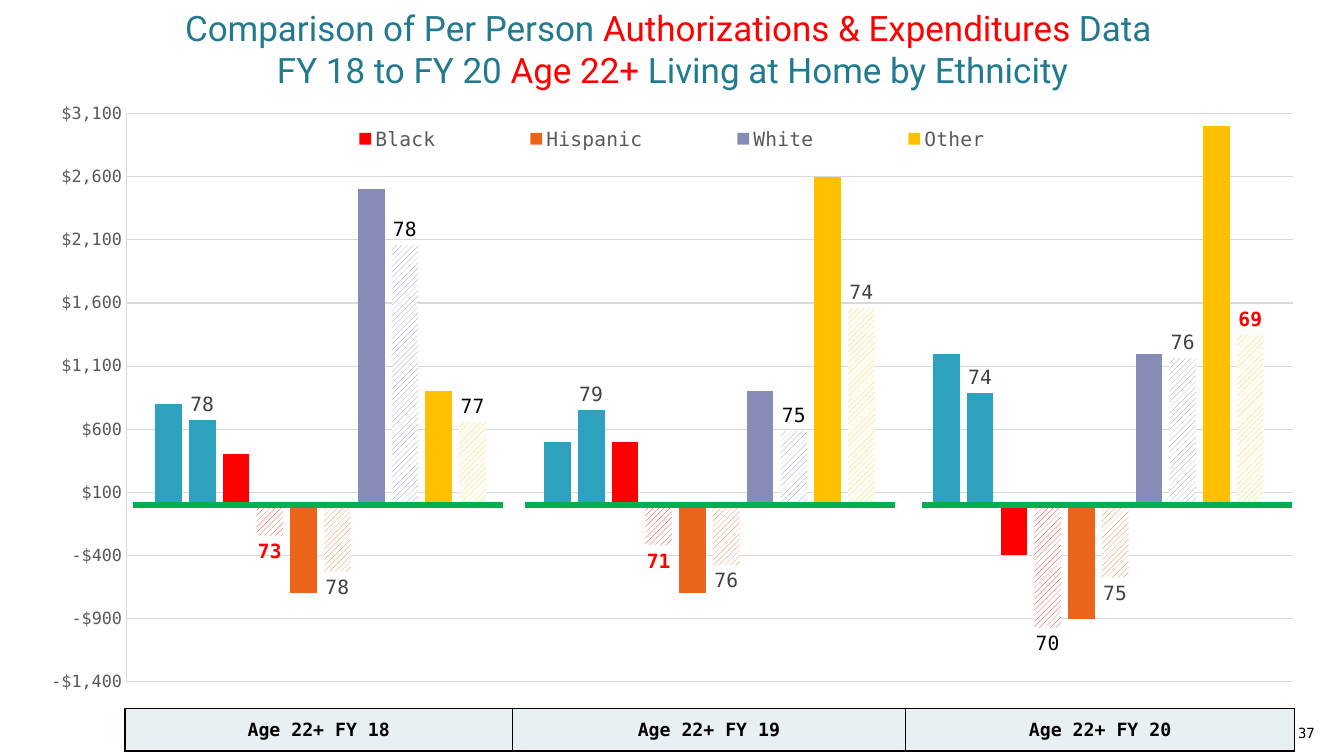
"""Build the slide comparing per person authorizations and expenditures by ethnicity."""
from lxml import etree
from pptx import Presentation
from pptx import util as u
from pptx.chart.data import CategoryChartData
from pptx.dml.color import RGBColor
from pptx.enum import chart as ch, dml, shapes, text
from pptx.oxml.ns import qn

WIDTH, HEIGHT = 13.33, 7.5
MONO, SANS = "DejaVu Sans Mono", "Roboto"
COLORS = {"white": "FFFFFF", "black": "000000", "title": "227A8F", "red": "FF0000",
          "grid": "D9D9D9", "axis": "595959", "label": "404040", "zero": "00B050",
          "band": "E8F0F4", "blue": "2DA2BF", "orange": "EB641B",
          "violet": "878BB8", "gold": "FFC000"}

TITLE = [
    [("Comparison of Per Person ", "title"), ("Authorizations & Expenditures ", "red"),
     ("Data ", "title")],
    [("FY 18 to FY 20 ", "title"), ("Age 22+", "red"),
     (" Living at Home by Ethnicity", "title")],
]
PAGE_NUMBER = "37"
YEARS = ["Age 22+ FY 18", "Age 22+ FY 19", "Age 22+ FY 20"]
YEAR_WIDTHS = [3.84, 3.9, 3.86]
ZERO_LINES = [1.32, 5.21, 9.14]
ZERO_WIDTH, ZERO_TOP = 3.67, 5.01

GROUPS = [
    ("Series 1", "blue", [800, 500, 1200], "Series 2", [677, 757, 892],
     [("78", "label"), ("79", "label"), ("74", "label")]),
    ("Black", "red", [400, 500, -400], "Series 4", [-243, -319, -972],
     [("73", "red"), ("71", "red"), ("70", "black")]),
    ("Hispanic", "orange", [-700, -700, -900], "Series 6", [-526, -476, -576],
     [("78", "label"), ("76", "label"), ("75", "label")]),
    ("White", "violet", [2500, 900, 1200], "Series 8", [2061, 586, 1165],
     [("78", "black"), ("75", "black"), ("76", "label")]),
    ("Other", "gold", [900, 2600, 3000], "Series 10", [659, 1562, 1347],
     [("77", "black"), ("74", "label"), ("69", "red")]),
]
PLOT_SHARE = {"x": 0.078, "y": 0.094, "w": 0.902, "h": 0.871}
LEGEND_SHARE = {"x": 0.19, "y": 0.11, "w": 0.62, "h": 0.045}
CHART_FORMAT = {"has_title": False, "has_legend": True}
VALUE_FORMAT = {"minimum_scale": -1400, "maximum_scale": 3100, "major_unit": 500,
                "has_major_gridlines": True,
                "major_tick_mark": ch.XL_TICK_MARK.NONE,
                "minor_tick_mark": ch.XL_TICK_MARK.NONE}
BAR_FORMAT = {"gap_width": 219, "overlap": -27, "vary_by_categories": False}
LEGEND_FORMAT = {"position": ch.XL_LEGEND_POSITION.TOP, "include_in_layout": False}
LABEL_FORMAT = {"show_value": True, "position": ch.XL_LABEL_POSITION.OUTSIDE_END,
                "number_format": '"$"#,##0', "number_format_is_linked": False}
TABLE_FORMAT = {"first_row": False, "horz_banding": False}
NO_MARGINS = {f"margin_{side}": 0 for side in ("left", "right", "top", "bottom")}


def rgb(name):
    return RGBColor.from_string(COLORS[name])


def inches(*lengths):
    return [u.Inches(length) for length in lengths]


def apply(target, values):
    for name, value in values.items():
        setattr(target, name, value)


def set_font(font, size, color, name=MONO, bold=False):
    apply(font, {"size": u.Pt(size), "name": name, "bold": bold})
    font.color.rgb = rgb(color)


def set_line(line, color, width):
    line.color.rgb = rgb(color)
    line.width = u.Pt(width)


def add_child(parent, tag, **attributes):
    return etree.SubElement(parent, qn(tag), **attributes)


def make_layout(share, inner=False):
    layout = etree.Element(qn("c:layout"))
    manual = add_child(layout, "c:manualLayout")
    if inner:
        add_child(manual, "c:layoutTarget", val="inner")
    for axis in "xy":
        add_child(manual, f"c:{axis}Mode", val="edge")
    for name, value in share.items():
        add_child(manual, f"c:{name}", val=str(value))
    return layout


def add_text(page, place, paragraphs, size, font, align):
    box = page.shapes.add_textbox(*inches(*place))
    frame = box.text_frame
    apply(frame, {"word_wrap": True, "vertical_anchor": text.MSO_ANCHOR.BOTTOM})
    for index, runs in enumerate(paragraphs):
        para = frame.add_paragraph() if index else frame.paragraphs[0]
        para.alignment = align
        for words, color in runs:
            span = para.add_run()
            span.text = words
            set_font(span.font, size, color, font)
    return box


def add_labels(series, labels):
    apply(series.data_labels, LABEL_FORMAT)
    set_font(series.data_labels.font, 14, "label")
    for index, (words, color) in enumerate(labels):
        label = series.points[index].data_label
        span = label.text_frame.paragraphs[0].add_run()
        span.text = words
        set_font(span.font, 14, color, bold=color == "red")
        label.position = ch.XL_LABEL_POSITION.OUTSIDE_END


def paint_series(plot):
    bars = list(plot.series)
    for index, (_, color, _, _, _, labels) in enumerate(GROUPS):
        solid, hatched = bars[2 * index:2 * index + 2]
        solid.invert_if_negative = hatched.invert_if_negative = False
        solid.format.fill.solid()
        solid.format.fill.fore_color.rgb = rgb(color)
        fill = hatched.format.fill
        fill.patterned()
        fill.pattern = (dml.MSO_PATTERN.WIDE_UPWARD_DIAGONAL if index
                        else dml.MSO_PATTERN.DARK_HORIZONTAL)
        fill.fore_color.rgb = rgb(color)
        fill.back_color.rgb = rgb("white")
        add_labels(hatched, labels)


def place_parts(chart):
    space = chart._chartSpace
    area = space.find(".//" + qn("c:plotArea"))
    legend = space.find(".//" + qn("c:legend"))
    for part in (area, legend):
        for old in part.findall(qn("c:layout")):
            part.remove(old)
    area.insert(0, make_layout(PLOT_SHARE, inner=True))
    anchor = legend.find(qn("c:legendPos"))
    for index in [0] + list(range(1, 2 * len(GROUPS), 2)):
        entry = etree.Element(qn("c:legendEntry"))
        add_child(entry, "c:idx", val=str(index))
        add_child(entry, "c:delete", val="1")
        anchor.addnext(entry)
        anchor = entry
    anchor.addnext(make_layout(LEGEND_SHARE))
    backdrop = etree.Element(qn("c:spPr"))
    add_child(backdrop, "a:noFill")
    add_child(add_child(backdrop, "a:ln"), "a:noFill")
    space.find(qn("c:txPr")).addprevious(backdrop)


def add_bars(page):
    data = CategoryChartData()
    data.categories = ["1", "2", "3"]
    for name, _, values, second_name, second_values, _ in GROUPS:
        data.add_series(name, values)
        data.add_series(second_name, second_values)
    chart = page.shapes.add_chart(ch.XL_CHART_TYPE.COLUMN_CLUSTERED,
                                  *inches(0.25, 0.52, 12.83, 6.47), data).chart
    apply(chart, CHART_FORMAT)
    set_font(chart.font, 10, "black")
    chart.category_axis.visible = False
    axis = chart.value_axis
    apply(axis, VALUE_FORMAT)
    apply(axis.tick_labels, {"number_format": '"$"#,##0', "number_format_is_linked": False})
    set_font(axis.tick_labels.font, 12, "axis")
    for line in (axis.format.line, axis.major_gridlines.format.line):
        set_line(line, "grid", 0.75)
    apply(chart.legend, LEGEND_FORMAT)
    set_font(chart.legend.font, 14, "axis")
    apply(chart.plots[0], BAR_FORMAT)
    paint_series(chart.plots[0])
    place_parts(chart)


def add_years(page):
    table = page.shapes.add_table(1, len(YEARS),
                                  *inches(1.24, 7.03, sum(YEAR_WIDTHS), 0.42)).table
    apply(table, TABLE_FORMAT)
    for column, (year, width) in enumerate(zip(YEARS, YEAR_WIDTHS)):
        table.columns[column].width = u.Inches(width)
        cell = table.cell(0, column)
        apply(cell, {**NO_MARGINS, "text": year, "vertical_anchor": text.MSO_ANCHOR.MIDDLE})
        para = cell.text_frame.paragraphs[0]
        para.alignment = text.PP_ALIGN.CENTER
        set_font(para.runs[0].font, 13, "black", bold=True)
        for side in "LRTB":
            edge = add_child(cell._tc.get_or_add_tcPr(), f"a:ln{side}", w=str(u.Pt(1)))
            add_child(add_child(edge, "a:solidFill"), "a:srgbClr", val=COLORS["black"])
        cell.fill.solid()
        cell.fill.fore_color.rgb = rgb("band")


def main():
    deck = Presentation()
    apply(deck, {"slide_width": u.Inches(WIDTH), "slide_height": u.Inches(HEIGHT)})
    page = deck.slides.add_slide(deck.slide_layouts[6])
    title = add_text(page, (1.67, 0.14, 10, 0.81), TITLE, 25, SANS, text.PP_ALIGN.CENTER)
    title.fill.solid()
    title.fill.fore_color.rgb = rgb("white")
    add_text(page, (12.61, 7, 0.53, 0.4), [[(PAGE_NUMBER, "black")]], 10, MONO,
             text.PP_ALIGN.RIGHT)
    add_bars(page)
    add_years(page)
    for left in ZERO_LINES:
        line = page.shapes.add_connector(shapes.MSO_CONNECTOR.STRAIGHT, *inches(
            left, ZERO_TOP, left + ZERO_WIDTH, ZERO_TOP))
        set_line(line.line, "zero", 4.5)
        add_child(line._element.spPr, "a:effectLst")
    deck.save("out.pptx")


if __name__ == "__main__":
    main()
